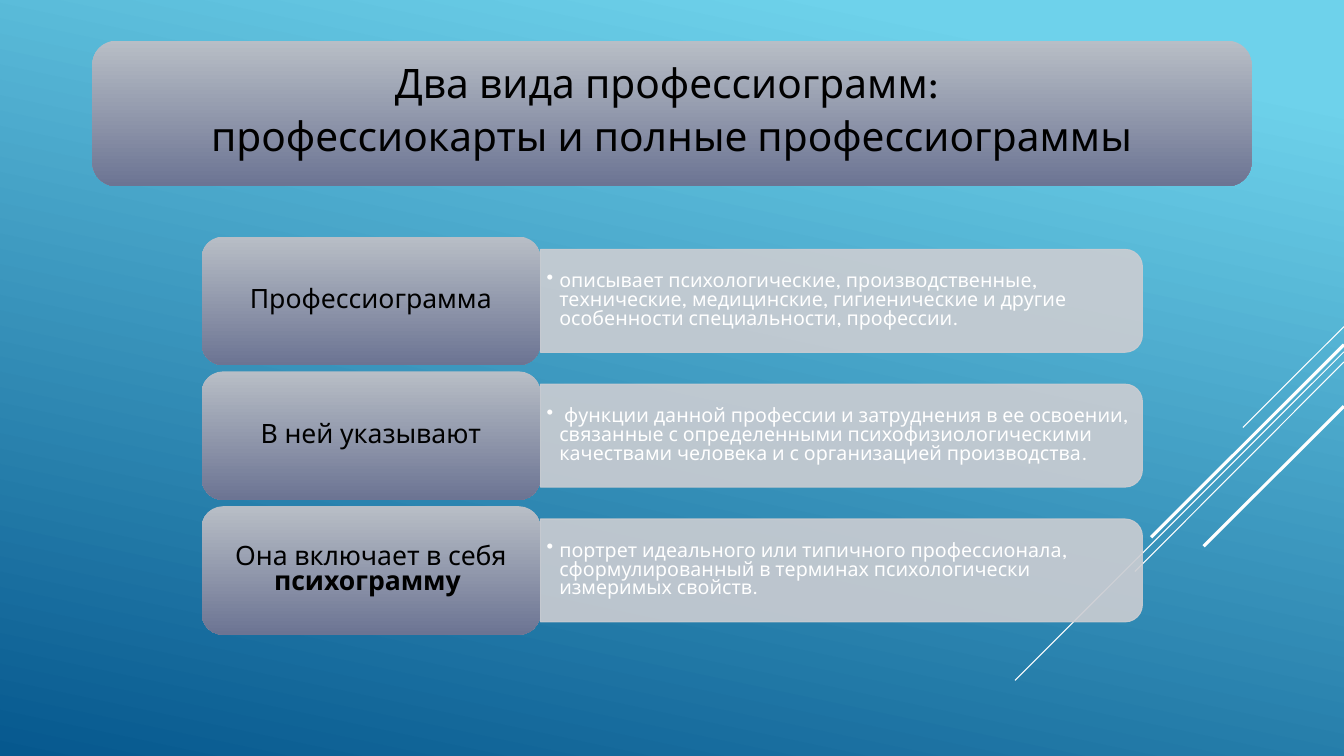
from lxml.etree import SubElement
from pptx import Presentation
from pptx.dml.color import RGBColor as RGB
from pptx.enum.shapes import MSO_CONNECTOR as CONNECTOR, MSO_SHAPE as SHAPE
from pptx.enum.text import MSO_ANCHOR as ANCHOR, PP_ALIGN as ALIGN
from pptx.oxml.ns import qn
from pptx.util import Pt

COLORS = {
    "sky": "6ED2EB",
    "ocean": "06588E",
    "silver": "B8BEC6",
    "slate": "6C7493",
    "mist": "CCCDD2",
    "white": "FFFFFF",
    "black": "000000",
}


class ProfessiogramSlide:
    font = "League Spartan"
    line_spacing = 0.8

    def __init__(self, deck):
        self.slide = deck.slides.add_slide(deck.slide_layouts[6])
        self.shapes = self.slide.shapes

    def color(self, name):
        return RGB.from_string(COLORS[name])

    def gradient(self, fill, angle, stops):
        fill.gradient()
        fill.gradient_angle = angle
        for stop, (position, name) in zip(fill.gradient_stops, stops):
            stop.position = position
            stop.color.rgb = self.color(name)

    def background(self):
        self.gradient(self.slide.background.fill, 258, [(0.1, "sky"), (1, "ocean")])

    def ray(self, start, end, weight):
        ray = self.shapes.add_connector(CONNECTOR.STRAIGHT, *map(Pt, start + end))
        ray.line.color.rgb = self.color("white")
        ray.line.width = Pt(weight)
        SubElement(ray._element.spPr, qn("a:effectLst"))

    def frame(self, shape, side, edge):
        frame = shape.text_frame
        frame.word_wrap = True
        frame.vertical_anchor = ANCHOR.MIDDLE
        frame.margin_left = frame.margin_right = Pt(side)
        frame.margin_top = frame.margin_bottom = Pt(edge)
        return frame

    def add_runs(self, paragraph, runs, size, name, align):
        paragraph.alignment = align
        paragraph.line_spacing = self.line_spacing
        for text, bold in runs:
            run = paragraph.add_run()
            run.text = text
            run.font.name = self.font
            run.font.size = Pt(size)
            run.font.bold = bold
            run.font.color.rgb = self.color(name)

    def card(self, box, paragraphs, size, side, edge):
        card = self.shapes.add_shape(SHAPE.ROUNDED_RECTANGLE, *map(Pt, box))
        card.shadow.inherit = False
        self.gradient(card.fill, 270, [(0, "silver"), (1, "slate")])
        card.line.fill.background()
        frame = self.frame(card, side, edge)
        for index, runs in enumerate(paragraphs):
            paragraph = frame.add_paragraph() if index else frame.paragraphs[0]
            self.add_runs(paragraph, runs, size, "black", ALIGN.CENTER)
            if index < len(paragraphs) - 1:
                paragraph.space_after = Pt(10)

    def panel(self, left, middle, width, height):
        panel = self.shapes.add_shape(
            SHAPE.ROUND_2_SAME_RECTANGLE,
            Pt(left + (width - height) / 2), Pt(middle - width / 2), Pt(height), Pt(width))
        panel.rotation = 90
        panel.shadow.inherit = False
        panel.fill.solid()
        panel.fill.fore_color.rgb = self.color("mist")
        panel.line.color.rgb = self.color("mist")
        panel.line.width = Pt(0.75)
        for tint in panel._element.spPr.iter(qn("a:srgbClr")):
            SubElement(tint, qn("a:alpha"), val="90000")

    def bullet(self, box, text):
        frame = self.frame(self.shapes.add_textbox(*map(Pt, box)), 4.5, 2.25)
        paragraph = frame.paragraphs[0]
        self.add_runs(paragraph, [(text, False)], 14, "white", ALIGN.LEFT)
        properties = paragraph._p.get_or_add_pPr()
        properties.set("marL", str(Pt(9)))
        properties.set("indent", str(-Pt(9)))
        SubElement(properties, qn("a:buChar"), char="•")


RAYS = [
    ((960, 233.3), (887.8, 305.3), 0.75),
    ((960, 251.3), (725, 486), 0.75),
    ((960, 258.5), (810.7, 408.2), 0.75),
    ((960, 246.2), (822.2, 383.8), 2.25),
    ((960, 290.2), (859.7, 390.2), 2.25),
]
HEADING = [
    [("Два вида профессиограмм: ", False)],
    [("профессиокарты и полные профессиограммы", False)],
]
ROWS = [
    ([("Профессиограмма", False)],
     "описывает психологические, производственные, технические, медицинские, "
     "гигиенические и другие особенности специальности, профессии."),
    ([("В ней указывают", False)],
     " функции данной профессии и затруднения в ее освоении, связанные с "
     "определенными психофизиологическими качествами человека и с организацией производства."),
    ([("Она включает в себя ", False), ("психограмму ", True)],
     "портрет идеального или типичного профессионала, сформулированный в терминах "
     "психологически измеримых свойств."),
]
LABEL_LEFT, LABEL_WIDTH, LABEL_HEIGHT = 144, 242, 91.75
PANEL_LEFT, PANEL_WIDTH, PANEL_HEIGHT = LABEL_LEFT + LABEL_WIDTH, 430, 73.5
TEXT_WIDTH, TEXT_HEIGHT = 426, 66
FIRST_TOP, PITCH = 169, 96.3


def main():
    deck = Presentation()
    deck.slide_width, deck.slide_height = Pt(960), Pt(540)
    page = ProfessiogramSlide(deck)
    page.background()
    for start, end, weight in RAYS:
        page.ray(start, end, weight)
    page.card((66, 29, 828, 104), HEADING, 29, 8.6, 8.6)
    for index, (label, description) in enumerate(ROWS):
        top = FIRST_TOP + index * PITCH
        middle = top + LABEL_HEIGHT / 2
        page.panel(PANEL_LEFT, middle, PANEL_WIDTH, PANEL_HEIGHT)
        page.bullet((PANEL_LEFT, middle - TEXT_HEIGHT / 2, TEXT_WIDTH, TEXT_HEIGHT), description)
        page.card((LABEL_LEFT, top, LABEL_WIDTH, LABEL_HEIGHT), [label], 19, 5.8, 2.9)
    deck.save("out.pptx")


if __name__ == "__main__":
    main()
